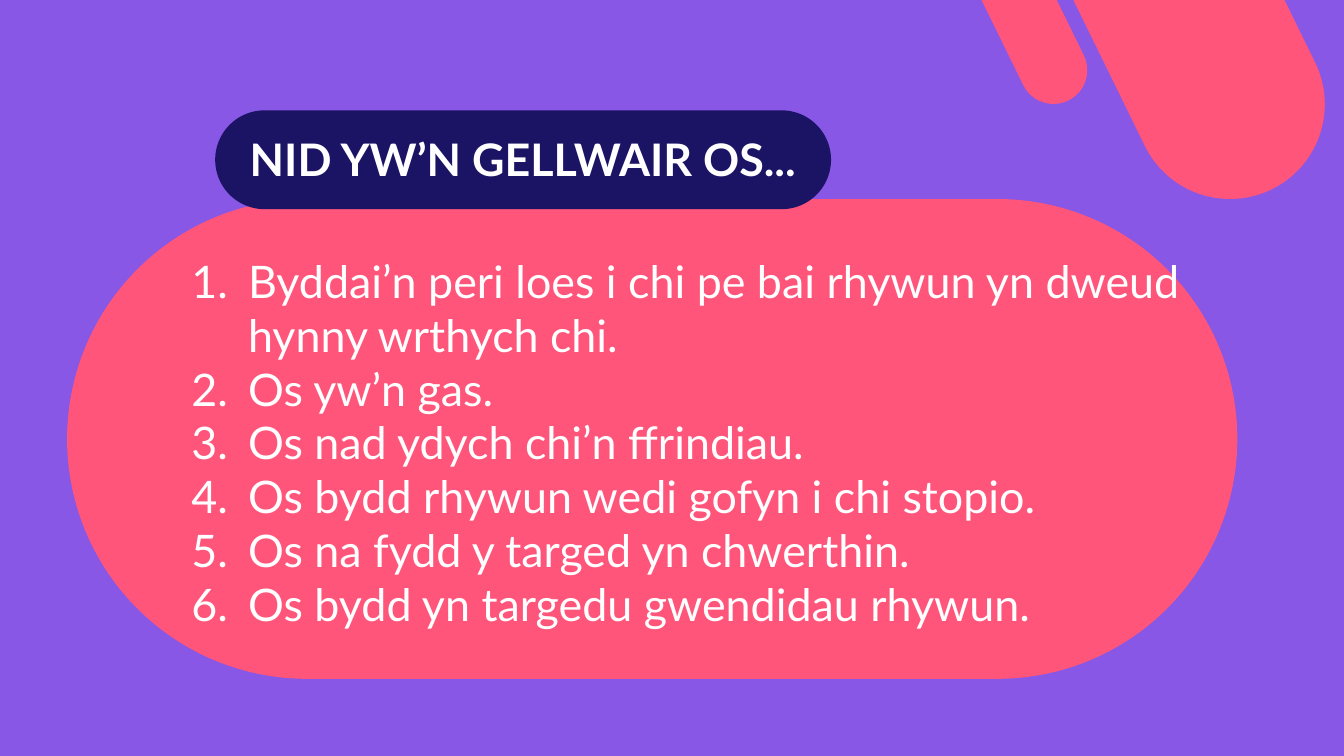
from dataclasses import dataclass

from lxml import etree
from pptx import Presentation
from pptx.dml.color import RGBColor
from pptx.enum.shapes import MSO_SHAPE
from pptx.enum.text import PP_ALIGN
from pptx.oxml.ns import qn
from pptx.slide import Slide
from pptx.text.text import _Paragraph
from pptx.util import Pt

ROUNDED = MSO_SHAPE.ROUNDED_RECTANGLE
LEFT, CENTER = PP_ALIGN.LEFT, PP_ALIGN.CENTER

COLORS = {"purple": "8857E5", "pink": "FF557A", "navy": "1B1464", "white": "FFFFFF"}
FONT = "Lato"
TEXT_SIZE = 32
NUMBER_INDENT = 40.5
BAR_ANGLE = 153.9


@dataclass
class Pill:
    left: float
    top: float
    width: float
    height: float
    color: str
    angle: float = 0


@dataclass
class TextBlock:
    left: float
    top: float
    width: float
    height: float
    lines: list[str]
    align: PP_ALIGN = LEFT
    bold: bool = False
    numbered: bool = False


PILLS = [
    Pill(47.9, 142.2, 835.9, 342.7, "pink"),
    Pill(759.6, -214.6, 135.4, 368.6, "pink", BAR_ANGLE),
    Pill(679, -187.2, 48.2, 272.9, "pink", BAR_ANGLE),
    Pill(153.7, 78.8, 439.9, 70.6, "navy"),
]

TEXT_BLOCKS = [
    TextBlock(48.2, 90.7, 650.9, 46.1, ["NID YW’N GELLWAIR OS..."], CENTER, bold=True),
    TextBlock(
        129.6, 177.8, 767.5, 278.6,
        [
            "Byddai’n peri loes i chi pe bai rhywun yn dweud hynny wrthych chi.",
            "Os yw’n gas.",
            "Os nad ydych chi’n ffrindiau.",
            "Os bydd rhywun wedi gofyn i chi stopio.",
            "Os na fydd y targed yn chwerthin.",
            "Os bydd yn targedu gwendidau rhywun.",
        ],
        numbered=True,
    ),
]


def color(name: str) -> RGBColor:
    return RGBColor.from_string(COLORS[name])


def draw_pill(page: Slide, pill: Pill) -> None:
    shape = page.shapes.add_shape(
        ROUNDED, Pt(pill.left), Pt(pill.top), Pt(pill.width), Pt(pill.height)
    )
    shape.adjustments[0] = 0.5
    shape.rotation = pill.angle
    shape.shadow.inherit = False
    shape.fill.solid()
    shape.fill.fore_color.rgb = color(pill.color)
    shape.line.fill.background()


def number_paragraph(para: _Paragraph) -> None:
    """Give the paragraph an automatic number with a hanging indent."""
    properties = para._p.get_or_add_pPr()
    properties.set("marL", str(Pt(NUMBER_INDENT)))
    properties.set("indent", str(-Pt(NUMBER_INDENT)))
    etree.SubElement(properties, qn("a:buFont"), typeface="+mj-lt")
    etree.SubElement(properties, qn("a:buAutoNum"), type="arabicPeriod")


def draw_text(page: Slide, block: TextBlock) -> None:
    box = page.shapes.add_textbox(
        Pt(block.left), Pt(block.top), Pt(block.width), Pt(block.height)
    )
    frame = box.text_frame
    frame.word_wrap = True
    frame.text = "\n".join(block.lines)
    for para in frame.paragraphs:
        para.alignment = block.align
        if block.numbered:
            number_paragraph(para)
        for span in para.runs:
            span.font.name = FONT
            span.font.size = Pt(TEXT_SIZE)
            span.font.bold = block.bold
            span.font.color.rgb = color("white")


def main() -> None:
    deck = Presentation()
    deck.slide_width, deck.slide_height = Pt(960), Pt(540)
    page = deck.slides.add_slide(deck.slide_layouts[6])
    page.background.fill.solid()
    page.background.fill.fore_color.rgb = color("purple")
    for pill in PILLS:
        draw_pill(page, pill)
    for block in TEXT_BLOCKS:
        draw_text(page, block)
    deck.save("out.pptx")


if __name__ == "__main__":
    main()
